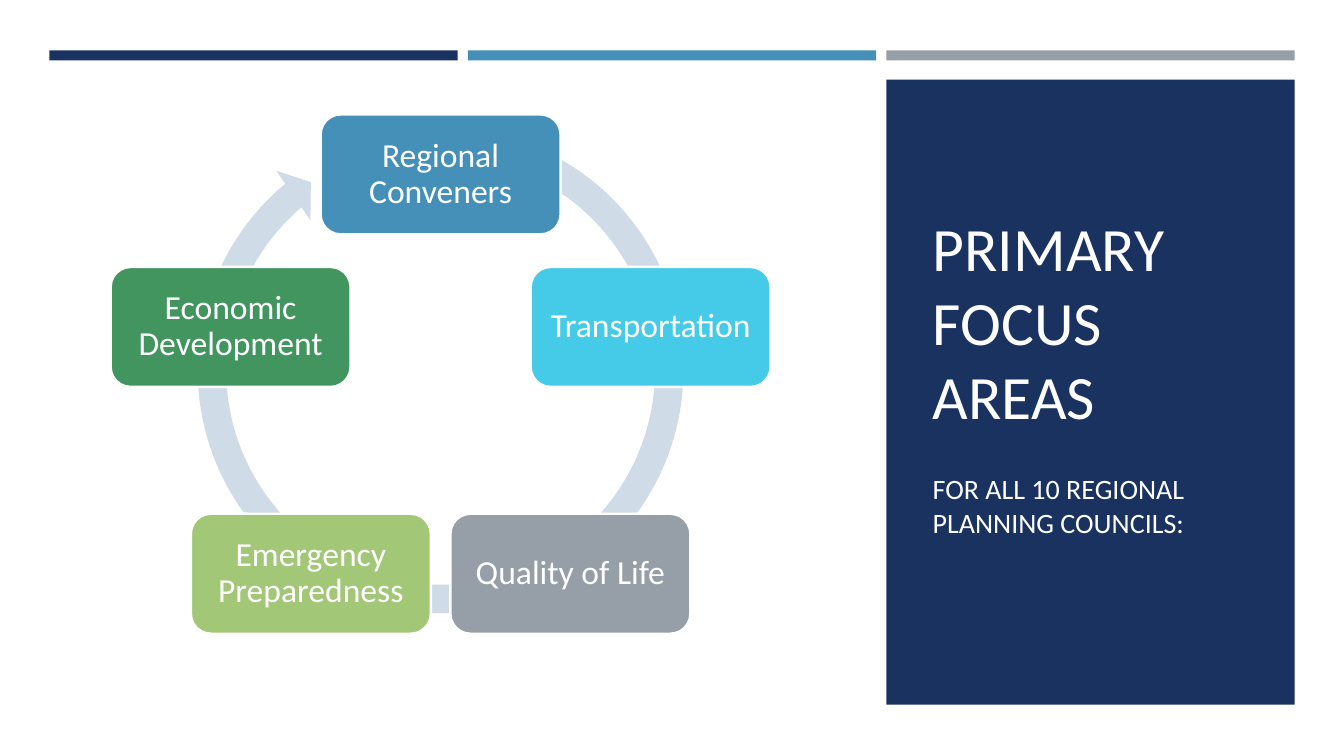
from dataclasses import dataclass
from math import cos, pi, sin

from pptx import Presentation
from pptx.dml.color import RGBColor
from pptx.enum.shapes import MSO_SHAPE
from pptx.enum.text import MSO_ANCHOR, MSO_AUTO_SIZE, PP_ALIGN
from pptx.util import Inches, Pt


@dataclass(frozen=True)
class Theme:
    font: str = "Calibri"
    navy: str = "1A3260"
    blue: str = "4590B8"
    cyan: str = "45CBE8"
    gray: str = "969FA7"
    lime: str = "A2C777"
    green: str = "42955F"
    ring: str = "CFDBE6"
    white: str = "FFFFFF"
    title_text: str = "FFFEFF"
    title_size: int = 44
    gap_size: int = 24
    subtitle_size: int = 20
    box_size: int = 24
    box_line: float = 1.75


THEME = Theme()

TITLE_RUNS = [
    ("PRIMARY FOCUS AREAS", THEME.title_size),
    (" ", THEME.gap_size),
    ("FOR ALL 10 REGIONAL PLANNING COUNCILS:", THEME.subtitle_size),
]
FOCUS_AREAS = [
    ("Regional Conveners", THEME.blue),
    ("Transportation", THEME.cyan),
    ("Quality of Life", THEME.gray),
    ("Emergency Preparedness", THEME.lime),
    ("Economic Development", THEME.green),
]
BAR_COLORS = [THEME.navy, THEME.blue, THEME.gray]

SLIDE_WIDTH, SLIDE_HEIGHT = 13.33, 7.5
GRID_LEFT, COLUMN_WIDTH, COLUMN_STEP = 0.49, 4.05, 4.15
BAR_TOP, BAR_HEIGHT = 0.5, 0.1
PANEL_TOP, PANEL_HEIGHT = 0.79, 6.2
TITLE_INSET, TITLE_TOP, TITLE_HEIGHT = 0.36, 1.14, 5.15
CYCLE_X, CYCLE_Y, CYCLE_RADIUS = 4.37, 3.92, 2.19
BOX_WIDTH, BOX_HEIGHT = 2.38, 1.19
RING_TOP, RING_SIZE = 1.11, 5.13
RING_ADJUSTMENTS = [0.055, 3.307, 137.954, 173.741, 0.058]


def column_left(column):
    return GRID_LEFT + column * COLUMN_STEP


def add_filled_shape(slide, kind, color, left, top, width, height):
    shape = slide.shapes.add_shape(
        kind, Inches(left), Inches(top), Inches(width), Inches(height)
    )
    shape.shadow.inherit = False
    shape.fill.solid()
    shape.fill.fore_color.rgb = RGBColor.from_string(color)
    shape.line.fill.background()
    return shape


def add_text_run(paragraph, text, size, color):
    run = paragraph.add_run()
    run.text = text
    run.font.name = THEME.font
    run.font.size = Pt(size)
    run.font.color.rgb = RGBColor.from_string(color)


def add_bars_and_panel(slide):
    for column, color in enumerate(BAR_COLORS):
        add_filled_shape(slide, MSO_SHAPE.RECTANGLE, color, column_left(column),
                         BAR_TOP, COLUMN_WIDTH, BAR_HEIGHT)
    add_filled_shape(slide, MSO_SHAPE.RECTANGLE, THEME.navy, column_left(2),
                     PANEL_TOP, COLUMN_WIDTH, PANEL_HEIGHT)


def fill_title(slide):
    title = slide.shapes.title
    title.left, title.top = Inches(column_left(2) + TITLE_INSET), Inches(TITLE_TOP)
    title.width = Inches(COLUMN_WIDTH - 2 * TITLE_INSET)
    title.height = Inches(TITLE_HEIGHT)
    frame = title.text_frame
    frame.word_wrap = True
    frame.auto_size = MSO_AUTO_SIZE.NONE
    frame.vertical_anchor = MSO_ANCHOR.MIDDLE
    paragraph = frame.paragraphs[0]
    paragraph.alignment = PP_ALIGN.LEFT
    for index, (text, size) in enumerate(TITLE_RUNS):
        if index:
            paragraph.add_line_break()
        add_text_run(paragraph, text, size, THEME.title_text)


def add_cycle(slide):
    ring = add_filled_shape(slide, MSO_SHAPE.CIRCULAR_ARROW, THEME.ring,
                            CYCLE_X - RING_SIZE / 2, RING_TOP, RING_SIZE, RING_SIZE)
    for index, value in enumerate(RING_ADJUSTMENTS):
        ring.adjustments[index] = value

    for index, (label, color) in enumerate(FOCUS_AREAS):
        angle = 2 * pi * index / len(FOCUS_AREAS)
        left = CYCLE_X + CYCLE_RADIUS * sin(angle) - BOX_WIDTH / 2
        top = CYCLE_Y - CYCLE_RADIUS * cos(angle) - BOX_HEIGHT / 2
        box = add_filled_shape(slide, MSO_SHAPE.ROUNDED_RECTANGLE, color,
                               left, top, BOX_WIDTH, BOX_HEIGHT)
        box.line.color.rgb = RGBColor.from_string(THEME.white)
        box.line.width = Pt(THEME.box_line)
        frame = box.text_frame
        frame.word_wrap = True
        frame.vertical_anchor = MSO_ANCHOR.MIDDLE
        frame.margin_left = frame.margin_right = Inches(0.1)
        frame.margin_top = frame.margin_bottom = Inches(0.1)
        paragraph = frame.paragraphs[0]
        paragraph.alignment = PP_ALIGN.CENTER
        paragraph.line_spacing = 0.9
        add_text_run(paragraph, label, THEME.box_size, THEME.white)


def main():
    presentation = Presentation()
    presentation.slide_width = Inches(SLIDE_WIDTH)
    presentation.slide_height = Inches(SLIDE_HEIGHT)
    slide = presentation.slides.add_slide(
        presentation.slide_layouts.get_by_name("Title Only")
    )
    add_bars_and_panel(slide)
    fill_title(slide)
    slide.shapes.element.append(slide.shapes.title.element)
    add_cycle(slide)
    presentation.save("out.pptx")


if __name__ == "__main__":
    main()
